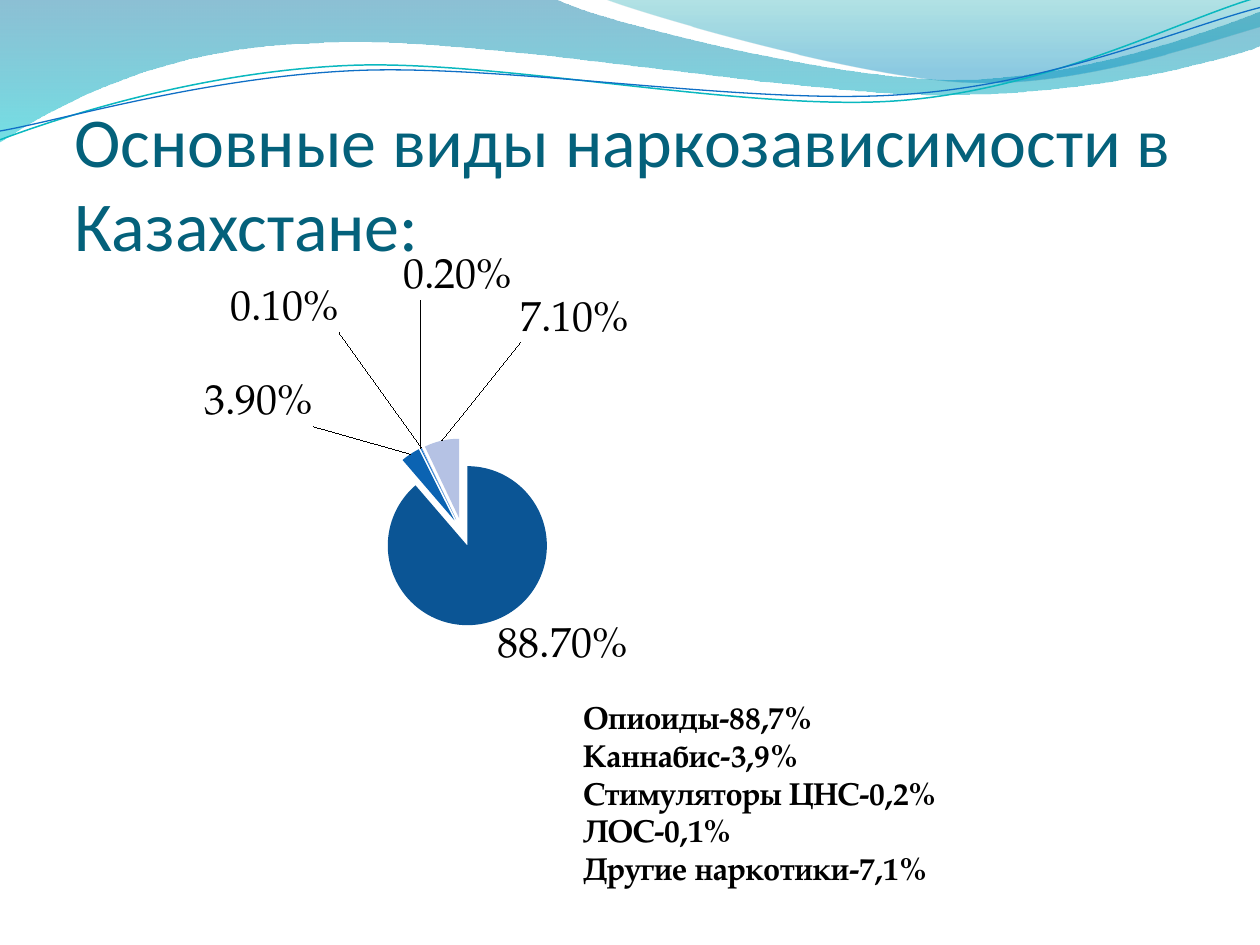
from lxml import etree
from pptx import Presentation
from pptx.chart.data import CategoryChartData
from pptx.dml.color import RGBColor
from pptx.enum import chart as charts, text
from pptx.oxml import parse_xml
from pptx.oxml.ns import nsdecls, qn
from pptx.util import Inches, Pt

SERIF = "TeX Gyre Pagella"

# Each wave: start point, then cubic curves (six numbers) or straight lines (two)
WIDE_WAVE = [(0, 0), (4.4, -0.01),
             (4.76, 0.17, 6.64, 0.63, 7.58, 0.63), (8.53, 0.63, 9.58, 0.26, 10, 0.09),
             (10.01, 0.36),
             (9.83, 0.44, 8.7, 0.76, 7.46, 0.75), (6.22, 0.75, 3.82, 0.28, 2.57, 0.34),
             (1.29, 0.36, 0.46, 0.83, -0.01, 1.13), (0, 0)]
RIGHT_WAVE = [(4.79, -0.01), (5.09, 0.11, 6.82, 0.62, 7.69, 0.65),
              (8.56, 0.69, 9.61, 0.32, 10, 0.21), (10, 0), (4.79, -0.01)]
TEAL_LINE = [(0, 1.11), (0.48, 0.93, 1.58, 0.57, 2.77, 0.52),
             (3.95, 0.47, 5.93, 0.89, 7.13, 0.8), (8.33, 0.71, 9.38, 0.15, 9.98, -0.02)]
BLUE_LINE = [(0, 1.04), (0.47, 0.96, 1.64, 0.61, 2.83, 0.56),
             (4.03, 0.51, 5.97, 0.84, 7.17, 0.75), (8.36, 0.67, 9.41, 0.21, 10, 0.06)]

CHART_WIDTH, CHART_HEIGHT = 9, 4.41
SHARES = [0.887, 0.039, 0.002, 0.001, 0.071]
SLICE_COLORS = ["0B5595", "0B63B2", "0D72CC", "6F93D2", "B5C2E4"]
# Inches from the usual label position, by slice
LABEL_SHIFTS = {1: (-0.74, -0.17), 2: (0.75, -1.12), 3: (-0.63, -0.86), 4: (1.5, -0.72)}
LEGEND = ["Опиоиды-88,7%", "Каннабис-3,9%", "Стимуляторы ЦНС-0,2%",
          "ЛОС-0,1%", "Другие наркотики-7,1%"]


def color(value):
    return RGBColor.from_string(value)


def add_wave(page, segments, closed):
    points = [(Inches(segment[i]), Inches(segment[i + 1]))
              for segment in segments for i in range(0, len(segment), 2)]
    builder = page.shapes.build_freeform(*points[0])
    builder.add_line_segments(points[1:], close=closed)
    wave = builder.convert_to_shape()
    wave.shadow.inherit = False

    # Join each three points of a curve into one cubic segment
    steps = iter(list(wave._element.spPr.iter(qn("a:lnTo"))))
    for segment in segments[1:]:
        first = next(steps)
        if len(segment) == 6:
            first.tag = qn("a:cubicBezTo")
            for _ in range(2):
                step = next(steps)
                first.append(step[0])
                step.getparent().remove(step)
    return wave


def add_filled_wave(page, segments, stops):
    wave = add_wave(page, segments, True)
    wave.line.fill.background()
    wave.fill.gradient()
    wave.fill.gradient_angle = 270
    for stop, (position, value, _) in zip(wave.fill.gradient_stops, stops):
        stop.position = position
        stop.color.rgb = color(value)
    for tag, (_, _, opacity) in zip(wave._element.spPr.iter(qn("a:srgbClr")), stops):
        etree.SubElement(tag, qn("a:alpha")).set("val", str(opacity * 1000))


def add_wave_line(page, segments, value, width):
    wave = add_wave(page, segments, False)
    wave.fill.background()
    wave.line.color.rgb = color(value)
    wave.line.width = Pt(width)


def add_text(page, place, lines, font, size, value, bold=False):
    box = page.shapes.add_textbox(*map(Inches, place))
    frame = box.text_frame
    frame.word_wrap = True
    frame.text = "\n".join(lines)
    for para in frame.paragraphs:
        para.font.name = font
        para.font.size = Pt(size)
        para.font.bold = bold
        para.font.color.rgb = color(value)
    return frame


def set_font(font, size):
    font.name = SERIF
    font.size = Pt(size)
    font.color.rgb = color("000000")


def manual_layout(**values):
    parts = "".join(f'<c:{name} val="{value}"/>' for name, value in values.items())
    return parse_xml(f'<c:layout {nsdecls("c")}><c:manualLayout>{parts}'
                     '</c:manualLayout></c:layout>')


def add_pie(page):
    data = CategoryChartData(number_format="0.00%")
    data.categories = ["1", "2", "3", "4", "5"]
    data.add_series("Series 1", SHARES)
    chart = page.shapes.add_chart(charts.XL_CHART_TYPE.PIE, Inches(0.5), Inches(2.02),
                                  Inches(CHART_WIDTH), Inches(CHART_HEIGHT), data).chart
    chart.has_legend = chart.has_title = False
    set_font(chart.font, 15.6)

    # Plot position
    area = chart._chartSpace.chart.plotArea
    for old in area.findall(qn("c:layout")):
        area.remove(old)
    area.insert(0, manual_layout(layoutTarget="inner", xMode="edge", yMode="edge",
                                 x=1.64 / CHART_WIDTH, y=1.46 / CHART_HEIGHT,
                                 w=3.06 / CHART_WIDTH, h=1.49 / CHART_HEIGHT))

    # Slices
    plot = chart.plots[0]
    plot.vary_by_categories = True
    series = plot.series[0]
    for index, value in enumerate(SLICE_COLORS):
        fill = series.points[index].format.fill
        fill.solid()
        fill.fore_color.rgb = color(value)
    series._element.find(qn("c:dPt")).addprevious(
        parse_xml(f'<c:explosion {nsdecls("c")} val="18"/>'))

    # Labels, the small slices' moved away with leader lines
    labels = series.data_labels
    labels.show_value = True
    labels.show_percentage = False
    labels.number_format = "0.00%"
    labels.number_format_is_linked = False
    labels.position = charts.XL_LABEL_POSITION.OUTSIDE_END
    set_font(labels.font, 24)
    leader = labels._element.find(qn("c:showLeaderLines"))
    if leader is None:
        leader = etree.SubElement(labels._element, qn("c:showLeaderLines"))
    leader.set("val", "1")
    for index, (x, y) in LABEL_SHIFTS.items():
        label = series.points[index].data_label
        set_font(label.font, 24)
        label.position = charts.XL_LABEL_POSITION.OUTSIDE_END
        tag = labels._element.find(f'{qn("c:dLbl")}[{index}]')
        tag.insert(1, manual_layout(x=x / CHART_WIDTH, y=y / CHART_HEIGHT))
        tag.insert(2, parse_xml(f'<c:numFmt {nsdecls("c")} formatCode="0.00%" '
                                'sourceLinked="0"/>'))


def main():
    deck = Presentation()
    deck.slide_width, deck.slide_height = Inches(10), Inches(7.5)
    page = deck.slides.add_slide(deck.slide_layouts[6])

    # Waves along the top
    add_filled_wave(page, WIDE_WAVE, [(0, "0074A1", 45), (1, "00C6CF", 55)])
    add_filled_wave(page, RIGHT_WAVE, [(0, "00A1A9", 30), (0.8, "008BBF", 45)])
    add_wave_line(page, TEAL_LINE, "0AB8BF", 0.85)
    add_wave_line(page, BLUE_LINE, "0F6FC6", 0.75)

    # Title
    title = add_text(page, (0.59, 0.52, 9, 1.59),
                     ["Основные виды наркозависимости в Казахстане:"], "Calibri", 40, "04617B")
    title.vertical_anchor = text.MSO_ANCHOR.BOTTOM
    title.margin_left = title.margin_right = title.margin_bottom = 0

    # Chart and its key
    add_pie(page)
    key = add_text(page, (4.53, 5.49, 5, 1.62), LEGEND, SERIF, 18, "000000", bold=True)
    key.auto_size = text.MSO_AUTO_SIZE.SHAPE_TO_FIT_TEXT
    deck.save("out.pptx")


if __name__ == "__main__":
    main()
